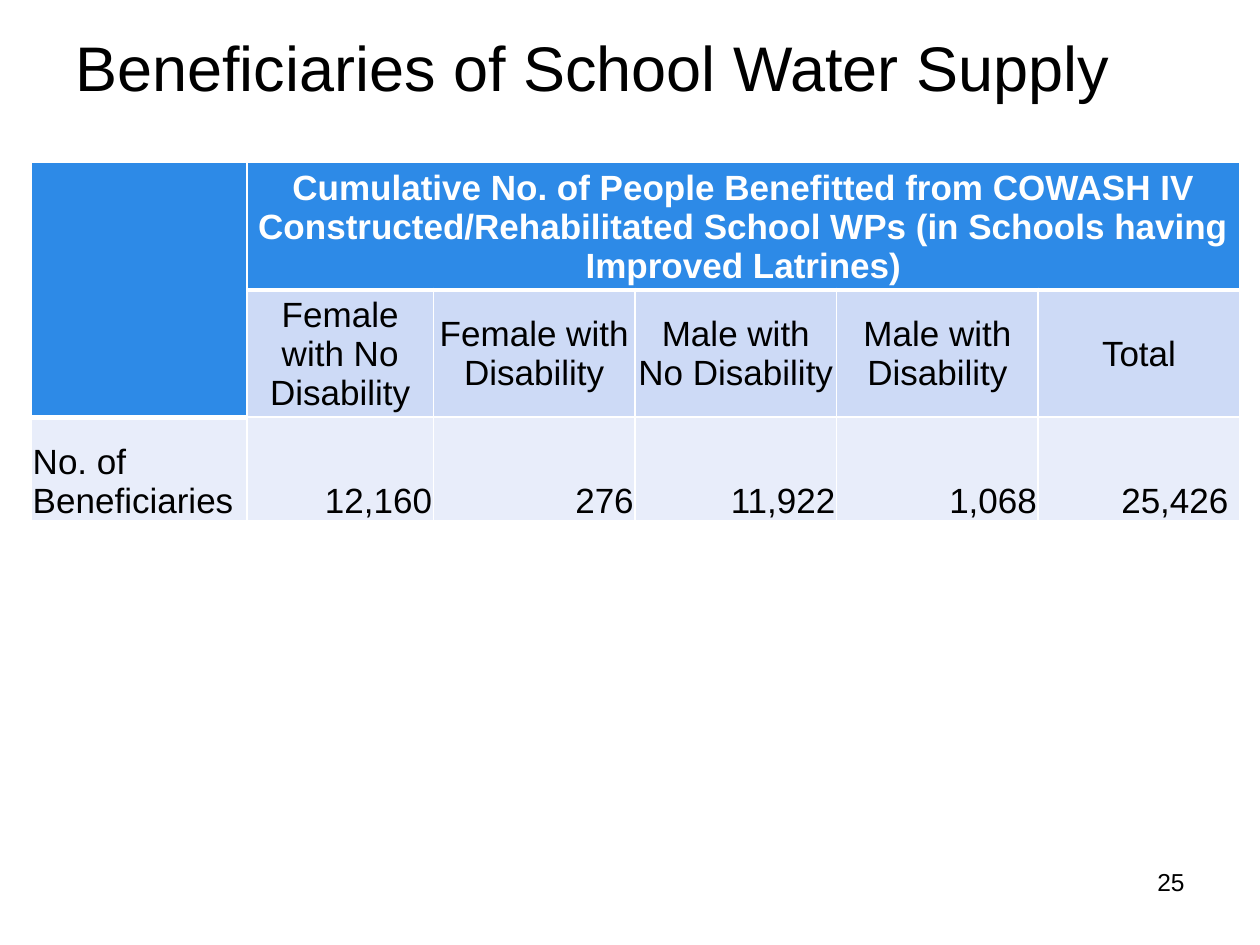
from typing import NamedTuple

import pptx
import pptx.dml.color
import pptx.enum.text
import pptx.oxml.ns
import pptx.util
from lxml import etree

Inches = pptx.util.Inches
ALIGN = pptx.enum.text.PP_ALIGN
ANCHOR = pptx.enum.text.MSO_ANCHOR

FONT = "Arial"
BLACK, WHITE = "000000", "FFFFFF"
HEADER_BLUE, GROUP_BLUE, VALUE_BLUE = "2D8AE7", "CDDAF6", "E8EDFA"
COLUMN_WIDTHS = [1.71, 1.48] + [1.6] * 4
ROW_HEIGHTS = [0.92, 0.82, 0.82]
HEADING = (
    "Cumulative No. of People Benefitted from COWASH IV "
    "Constructed/Rehabilitated School WPs (in Schools having Improved Latrines)"
)


class Beneficiaries(NamedTuple):
    group: str
    count: str


BENEFICIARIES = [
    Beneficiaries("Female with No Disability", "12,160"),
    Beneficiaries("Female with Disability", "276"),
    Beneficiaries("Male with No Disability", "11,922"),
    Beneficiaries("Male with Disability", "1,068"),
    Beneficiaries("Total", "25,426"),
]


def rgb(colour: str):
    return pptx.dml.color.RGBColor.from_string(colour)


def write(frame, text: str, *, size=20, colour=BLACK, bold=False, align=ALIGN.LEFT) -> None:
    frame.word_wrap = True
    paragraph = frame.paragraphs[0]
    paragraph.alignment = align
    run = paragraph.add_run()
    run.text = text
    run.font.name = FONT
    run.font.size = pptx.util.Pt(size)
    run.font.bold = bold
    run.font.color.rgb = rgb(colour)


def add_text(slide, left, top, width, height, text: str, anchor=ANCHOR.TOP, **text_format) -> None:
    box = slide.shapes.add_textbox(Inches(left), Inches(top), Inches(width), Inches(height))
    box.text_frame.vertical_anchor = anchor
    write(box.text_frame, text, **text_format)


def style_cell(cell, fill: str, top=1, bottom=1) -> None:
    """Set the fill and the white borders, top and bottom given in points."""
    properties = cell._tc.get_or_add_tcPr()
    for side, points in (("L", 1), ("R", 1), ("T", top), ("B", bottom)):
        line = etree.SubElement(
            properties, pptx.oxml.ns.qn(f"a:ln{side}"), w=str(pptx.util.Pt(points))
        )
        solid = etree.SubElement(line, pptx.oxml.ns.qn("a:solidFill"))
        etree.SubElement(solid, pptx.oxml.ns.qn("a:srgbClr"), val=WHITE)
    cell.fill.solid()
    cell.fill.fore_color.rgb = rgb(fill)


def fill_cell(cell, text: str, anchor=ANCHOR.MIDDLE, right=0.01, **text_format) -> None:
    cell.margin_left = cell.margin_top = Inches(0.01)
    cell.margin_right = Inches(right)
    cell.margin_bottom = 0
    cell.vertical_anchor = anchor
    write(cell.text_frame, text, **text_format)


def add_beneficiary_table(slide) -> None:
    table = slide.shapes.add_table(
        len(ROW_HEIGHTS), len(COLUMN_WIDTHS), Inches(0.25), Inches(1.29),
        Inches(sum(COLUMN_WIDTHS)), Inches(sum(ROW_HEIGHTS)),
    ).table
    table.horz_banding = False
    for column, width in zip(table.columns, COLUMN_WIDTHS):
        column.width = Inches(width)
    for row, height in zip(table.rows, ROW_HEIGHTS):
        row.height = Inches(height)

    for column in range(len(COLUMN_WIDTHS)):
        header_rows = 2 if column == 0 else 1
        for row, row_fill in enumerate((HEADER_BLUE, GROUP_BLUE, VALUE_BLUE)):
            style_cell(
                table.cell(row, column),
                HEADER_BLUE if row < header_rows else row_fill,
                top=3 if row == header_rows else 1,
                bottom=3 if row < header_rows else 1,
            )
    table.cell(0, 0).merge(table.cell(1, 0))
    table.cell(0, 1).merge(table.cell(0, len(COLUMN_WIDTHS) - 1))

    fill_cell(table.cell(0, 1), HEADING, colour=WHITE, bold=True, align=ALIGN.CENTER)
    fill_cell(table.cell(2, 0), "No. of Beneficiaries", ANCHOR.BOTTOM)
    for column, (group, count) in enumerate(BENEFICIARIES, start=1):
        fill_cell(table.cell(1, column), group, align=ALIGN.CENTER)
        fill_cell(
            table.cell(2, column), count, ANCHOR.BOTTOM,
            right=0.09 if group == "Total" else 0.01, align=ALIGN.RIGHT,
        )


def main() -> None:
    deck = pptx.Presentation()
    deck.slide_width, deck.slide_height = Inches(10), Inches(7.5)
    slide = deck.slides.add_slide(deck.slide_layouts[6])
    add_text(slide, 0.5, 0.21, 9, 0.64, "Beneficiaries of School Water Supply",
             ANCHOR.MIDDLE, size=36)
    add_beneficiary_table(slide)
    add_text(slide, 7.17, 6.83, 2.33, 0.52, "25", size=14, align=ALIGN.RIGHT)
    deck.save("out.pptx")


if __name__ == "__main__":
    main()
